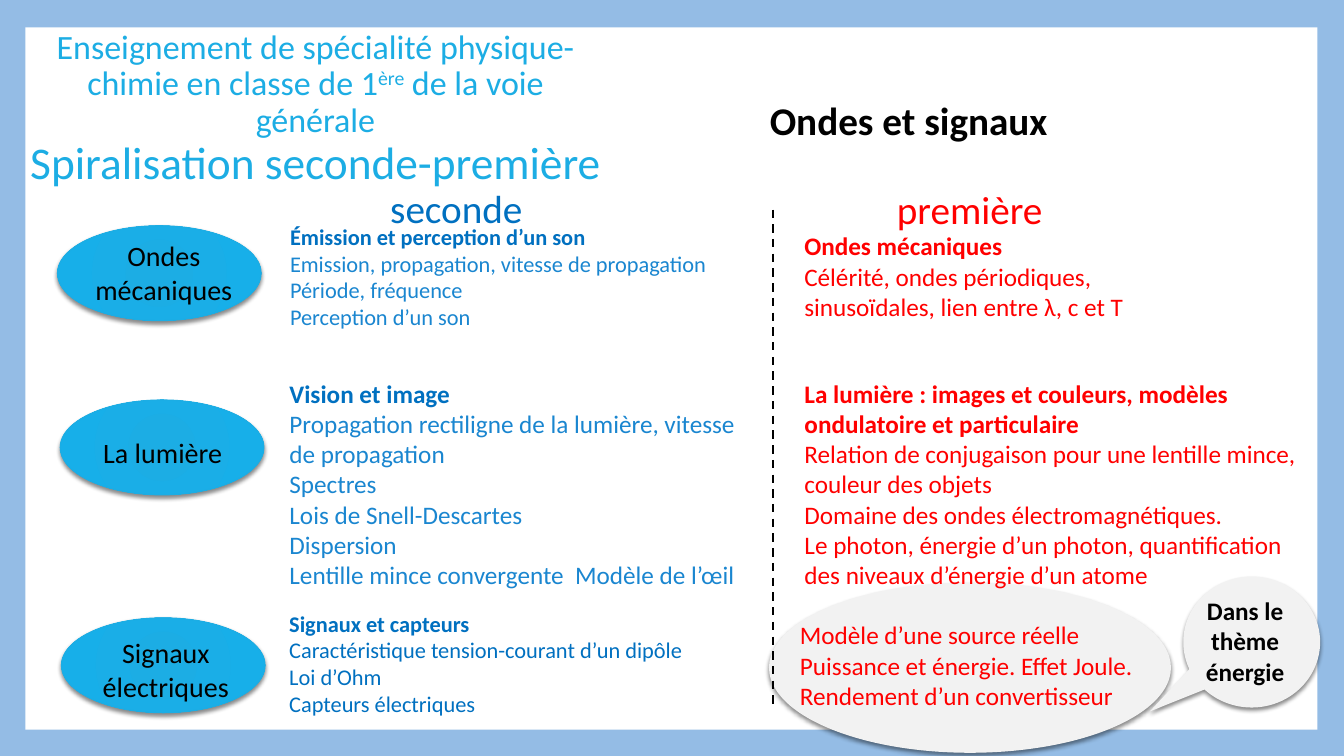
from copy import deepcopy
from dataclasses import dataclass

from lxml.etree import SubElement
from pptx import Presentation
from pptx.dml.color import RGBColor
from pptx.enum.dml import MSO_LINE
from pptx.enum.shapes import MSO_CONNECTOR, MSO_SHAPE
from pptx.enum.text import MSO_ANCHOR, MSO_AUTO_SIZE, PP_ALIGN
from pptx.oxml.ns import qn
from pptx.shapes.autoshape import Shape
from pptx.slide import Slide
from pptx.text.text import Font
from pptx.util import Cm, Pt

BORDER_BLUE = RGBColor(0x94, 0xBC, 0xE5)
WHITE = RGBColor(0xFF, 0xFF, 0xFF)
BLACK = RGBColor(0, 0, 0)
LIGHT_GREY = RGBColor(0xF2, 0xF2, 0xF2)
CYAN = RGBColor(0x1C, 0xAD, 0xE4)
CYAN_MIDDLE = RGBColor(0x17, 0xAF, 0xE9)
CYAN_EDGE = RGBColor(0x07, 0xA5, 0xE1)
DARK_BLUE = RGBColor(0x00, 0x70, 0xC0)
MEDIUM_BLUE = RGBColor(0x1A, 0x86, 0xD0)
RED = RGBColor(0xFF, 0, 0)
TYPEFACE = "Calibri"


@dataclass(frozen=True)
class Box:
    left: float
    top: float
    width: float
    height: float

    def lengths(self) -> tuple[Cm, Cm, Cm, Cm]:
        return Cm(self.left), Cm(self.top), Cm(self.width), Cm(self.height)


@dataclass(frozen=True)
class TextBlock:
    box: Box
    lines: tuple[str, ...]
    size: float
    color: RGBColor
    body_color: RGBColor | None = None
    bold_first: bool = False
    centered: bool = False
    wrap: bool = True
    placeholder: int | None = None


@dataclass(frozen=True)
class Theme:
    ellipse_left: float
    ellipse_top: float
    label: TextBlock


THEMES = (
    Theme(1.45, 5.69, TextBlock(Box(1.78, 5.89, 4.7, 1.96), ("Ondes mécaniques",),
                                20, BLACK, centered=True)),
    Theme(1.52, 10.08, TextBlock(Box(1.75, 10.85, 4.7, 1.12), ("La lumière",),
                                 20, BLACK, centered=True)),
    Theme(1.55, 15.57, TextBlock(Box(1.83, 15.9, 4.7, 1.96), ("Signaux électriques",),
                                 20, BLACK, centered=True)),
)

HEADINGS = (
    TextBlock(Box(19.15, 2.29, 7.95, 1.45), ("Ondes et signaux",), 28, BLACK,
              bold_first=True, wrap=False),
    TextBlock(Box(9.58, 4.52, 6.45, 1.45), ("seconde",), 28, DARK_BLUE, placeholder=1),
    TextBlock(Box(22.35, 4.55, 7.49, 1.45), ("première",), 28, RED, placeholder=3),
)

LISTS = (
    TextBlock(Box(7.06, 5.49, 11.91, 3), (
        "Émission et perception d’un son",
        "Emission, propagation, vitesse de propagation",
        "Période, fréquence",
        "Perception d’un son",
    ), 16, DARK_BLUE, MEDIUM_BLUE, bold_first=True),
    TextBlock(Box(7.04, 9.4, 12.01, 5.64), (
        "Vision et image",
        "Propagation rectiligne de la lumière, vitesse de propagation",
        "Spectres",
        "Lois de Snell-Descartes",
        "Dispersion",
        "Lentille mince convergente  Modèle de l’œil",
    ), 18, DARK_BLUE, MEDIUM_BLUE, bold_first=True, placeholder=2),
    TextBlock(Box(7.04, 15.24, 11.61, 3), (
        "Signaux et capteurs",
        "Caractéristique tension-courant d’un dipôle",
        "Loi d’Ohm",
        "Capteurs électriques",
    ), 16, DARK_BLUE, bold_first=True),
    TextBlock(Box(20.02, 5.69, 10.95, 2.57), (
        "Ondes mécaniques",
        "Célérité, ondes périodiques, sinusoïdales, lien entre λ, c et T",
    ), 18, RED, bold_first=True),
    TextBlock(Box(20.02, 9.4, 13.51, 5.64), (
        "La lumière : images et couleurs, modèles ondulatoire et particulaire",
        "Relation de conjugaison pour une lentille mince, couleur des objets",
        "Domaine des ondes électromagnétiques.",
        "Le photon, énergie d’un photon, quantification des niveaux d’énergie d’un atome",
    ), 18, RED, bold_first=True, placeholder=4),
    TextBlock(Box(19.91, 15.49, 10.95, 2.57), (
        "Modèle d’une source réelle",
        "Puissance et énergie. Effet Joule.",
        "Rendement d’un convertisseur",
    ), 18, RED),
)

ENERGY_NOTE = TextBlock(Box(29.49, 14.88, 3.78, 2.57), ("Dans le thème énergie",), 18, BLACK,
                        bold_first=True, centered=True)


def format_font(font: Font, size: float, color: RGBColor, bold: bool = False) -> None:
    font.name = TYPEFACE
    font.size = Pt(size)
    font.bold = bold
    font.color.rgb = color


def place_placeholder(slide: Slide, index: int, box: Box) -> Shape:
    holder = next(p for p in slide.placeholders if p.placeholder_format.idx == index)
    holder.left, holder.top, holder.width, holder.height = box.lengths()
    slide.shapes._spTree.append(holder._element)
    return holder


def add_text(slide: Slide, block: TextBlock) -> None:
    if block.placeholder is None:
        holder = slide.shapes.add_textbox(*block.box.lengths())
    else:
        holder = place_placeholder(slide, block.placeholder, block.box)
    frame = holder.text_frame
    frame.text = "\n".join(block.lines)
    frame.word_wrap = block.wrap
    frame.auto_size = MSO_AUTO_SIZE.SHAPE_TO_FIT_TEXT
    frame.vertical_anchor = MSO_ANCHOR.TOP
    for position, paragraph in enumerate(frame.paragraphs):
        first = position == 0
        paragraph.alignment = PP_ALIGN.CENTER if block.centered else PP_ALIGN.LEFT
        paragraph.space_before = Pt(0)
        if block.placeholder is not None:
            properties = paragraph._p.get_or_add_pPr()
            properties.set("marL", "0")
            properties.set("indent", "0")
            SubElement(properties, qn("a:buNone"))
        color = block.color if first else block.body_color or block.color
        for run in paragraph.runs:
            format_font(run.font, block.size, color, first and block.bold_first)


def add_filled(slide: Slide, kind: MSO_SHAPE, box: Box, color: RGBColor,
               shadow: bool = True) -> Shape:
    shape = slide.shapes.add_shape(kind, *box.lengths())
    shape.fill.solid()
    shape.fill.fore_color.rgb = color
    shape.line.fill.background()
    shape.shadow.inherit = False
    if shadow:
        effects = shape._element.spPr.find(qn("a:effectLst"))
        outer = SubElement(effects, qn("a:outerShdw"), blurRad=str(Pt(3)), dist=str(Pt(2)),
                           dir="5400000", rotWithShape="0")
        black = SubElement(outer, qn("a:srgbClr"), val=str(BLACK))
        SubElement(black, qn("a:alpha"), val="45000")
    return shape


def add_theme_ellipse(slide: Slide, theme: Theme) -> None:
    box = Box(theme.ellipse_left, theme.ellipse_top, 5.13, 2.39)
    ellipse = add_filled(slide, MSO_SHAPE.OVAL, box, CYAN)
    ellipse.line.color.rgb = CYAN
    ellipse.line.width = Pt(0.79)
    properties = ellipse._element.spPr
    gradient = SubElement(properties, qn("a:gradFill"), rotWithShape="1")
    stops = SubElement(gradient, qn("a:gsLst"))
    for percent, color in ((0, CYAN), (90, CYAN_MIDDLE), (100, CYAN_EDGE)):
        stop = SubElement(stops, qn("a:gs"), pos=str(percent * 1000))
        SubElement(stop, qn("a:srgbClr"), val=str(color))
    circle = SubElement(gradient, qn("a:path"), path="circle")
    SubElement(circle, qn("a:fillToRect"), {side: "100000" for side in "ltrb"})
    properties.replace(properties.find(qn("a:solidFill")), gradient)


def add_title(slide: Slide) -> None:
    frame = place_placeholder(slide, 0, Box(0.38, 0.99, 15.14, 3.53)).text_frame
    frame.word_wrap = True
    frame.auto_size = MSO_AUTO_SIZE.NONE
    frame.vertical_anchor = MSO_ANCHOR.MIDDLE
    paragraph = frame.paragraphs[0]
    paragraph.text = "Enseignement de spécialité physique-chimie en classe de 1"
    paragraph.alignment = PP_ALIGN.CENTER
    paragraph.line_spacing = 0.9
    for text in ("ère", " de la voie générale"):
        paragraph.add_run().text = text
    paragraph.add_line_break()
    paragraph.add_run().text = "Spiralisation seconde-première"
    for run, size in zip(paragraph.runs, (24.3, 24.3, 24.3, 32.4)):
        format_font(run.font, size, CYAN)
    course = paragraph.runs[0]._r.get_or_add_rPr()
    paragraph._p.find(qn("a:br")).append(deepcopy(course))
    paragraph.runs[1]._r.get_or_add_rPr().set("baseline", "30000")


def add_divider(slide: Slide) -> None:
    divider = slide.shapes.add_connector(MSO_CONNECTOR.STRAIGHT, Cm(19.48), Cm(5.28),
                                         Cm(19.48), Cm(17.83))
    divider.line.color.rgb = BLACK
    divider.line.width = Pt(1.5)
    divider.line.dash_style = MSO_LINE.DASH
    SubElement(divider._element.spPr, qn("a:effectLst"))


def main() -> None:
    presentation = Presentation()
    presentation.slide_width, presentation.slide_height = Cm(33.87), Cm(19.05)
    slide = presentation.slides.add_slide(presentation.slide_layouts[4])
    slide.background.fill.solid()
    slide.background.fill.fore_color.rgb = BORDER_BLUE
    add_filled(slide, MSO_SHAPE.RECTANGLE, Box(0.64, 0.69, 32.56, 17.7), WHITE, shadow=False)
    add_filled(slide, MSO_SHAPE.OVAL, Box(19.38, 14.68, 10.13, 4.29), LIGHT_GREY)
    add_divider(slide)
    for theme in THEMES:
        add_theme_ellipse(slide, theme)
    callout = add_filled(slide, MSO_SHAPE.OVAL_CALLOUT, Box(29.82, 14.53, 3.45, 3.3), LIGHT_GREY)
    callout.adjustments[0], callout.adjustments[1] = -0.745, 0.53
    labels = tuple(theme.label for theme in THEMES)
    for block in HEADINGS + labels + LISTS + (ENERGY_NOTE,):
        add_text(slide, block)
    add_title(slide)
    presentation.save("out.pptx")


if __name__ == "__main__":
    main()
